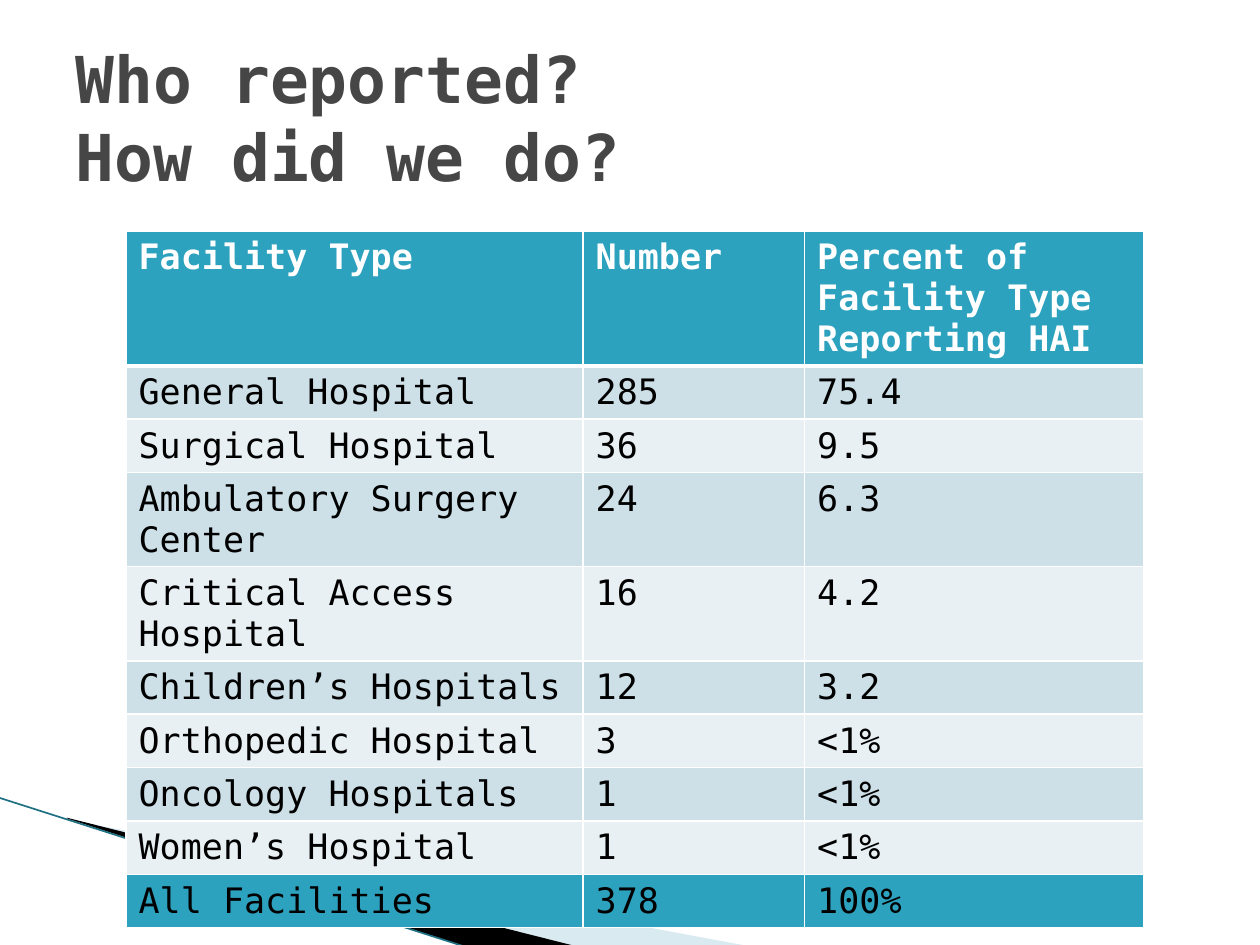
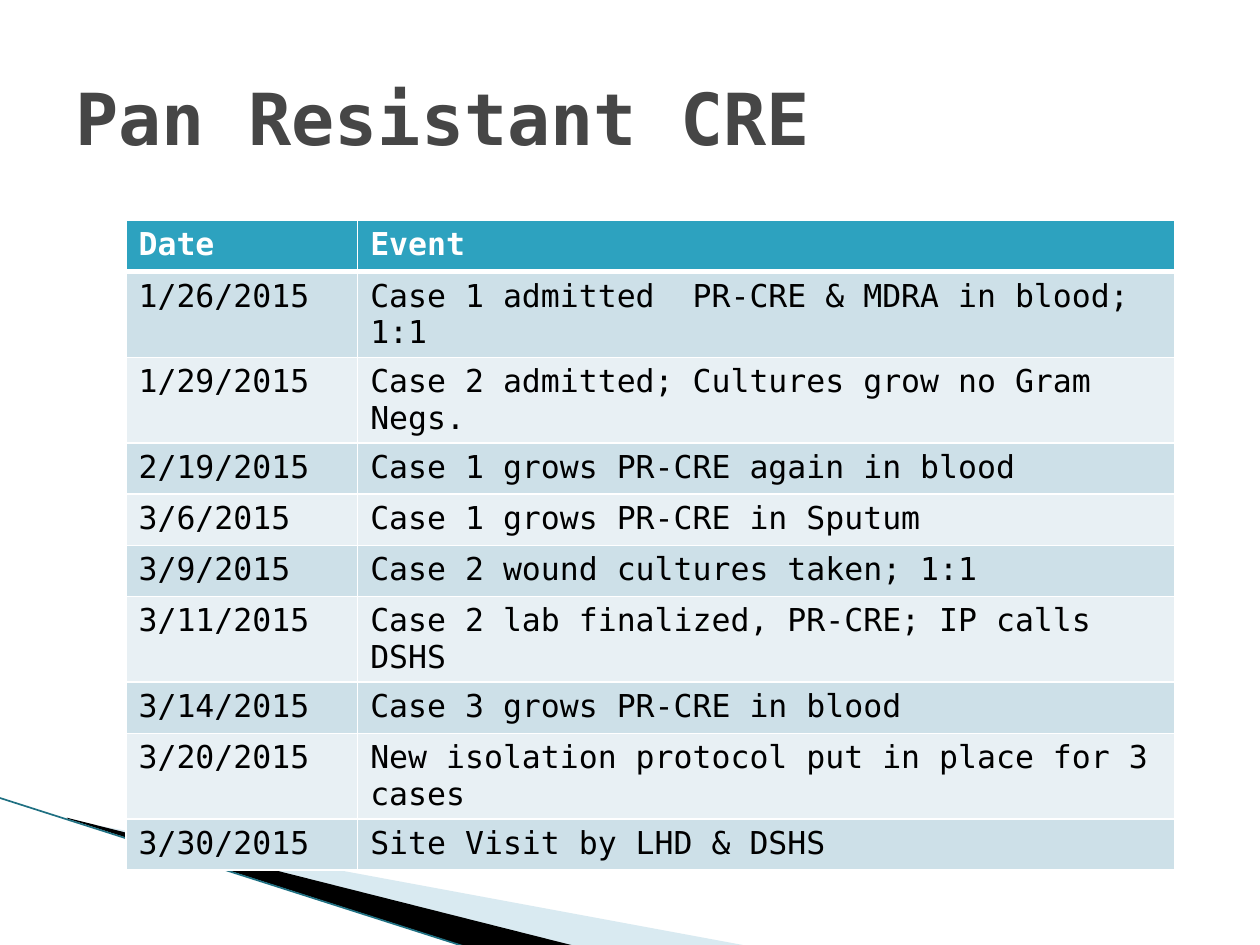
from lxml import etree
from pptx import Presentation
from pptx import util as u
from pptx.dml.color import RGBColor
from pptx.enum import shapes, text
from pptx.oxml import ns, parse_xml

Pt = u.Pt
FONT = "DejaVu Sans Mono"
HUES = {
    "head": "2DA2BF", "odd": "CDE0E8", "even": "E8F0F4", "white": "FFFFFF",
    "black": "000000", "title": "464646", "pale": "A0CBDC", "line": "1F7082",
}
ROW = 29.2
WEDGES = [
    ("pale", 40, [(39.6, 468.7), (428.4, 540.7), (328.3, 540.7), (39.6, 468)]),
    ("black", 100, [(38.2, 467.3), (329, 540.7), (267.8, 541.4), (38.9, 468)]),
]
TYPES = [
    ("Facility Type", "Number", "Percent of Facility Type Reporting HAI"),
    ("General Hospital", "285", "75.4"),
    ("Surgical Hospital", "36", "9.5"),
    ("Ambulatory Surgery Center", "24", "6.3"),
    ("Critical Access Hospital", "16", "4.2"),
    ("Children’s Hospitals", "12", "3.2"),
    ("Orthopedic Hospital", "3", "<1%"),
    ("Oncology Hospitals", "1", "<1%"),
    ("Women’s Hospital", "1", "<1%"),
    ("All Facilities", "378", "100%"),
]
EVENTS = [
    ("Date", "Event"),
    ("1/26/2015", "Case 1 admitted  PR-CRE & MDRA in blood; 1:1"),
    ("1/29/2015", "Case 2 admitted; Cultures grow no Gram Negs."),
    ("2/19/2015", "Case 1 grows PR-CRE again in blood"),
    ("3/6/2015", "Case 1 grows PR-CRE in Sputum"),
    ("3/9/2015", "Case 2 wound cultures taken; 1:1"),
    ("3/11/2015", "Case 2 lab finalized, PR-CRE; IP calls DSHS"),
    ("3/14/2015", "Case 3 grows PR-CRE in blood"),
    ("3/20/2015", "New isolation protocol put in place for 3 cases"),
    ("3/30/2015", "Site Visit by LHD & DSHS"),
]


def tint(name):
    return RGBColor.from_string(HUES[name])


def assign(item, form):
    for key, value in form.items():
        setattr(item, key, value)


def style(para, size, hue, bold):
    for run in para.runs:
        assign(run.font, {"name": FONT, "size": Pt(size), "bold": bold})
        run.font.color.rgb = tint(hue)


def paint(item, hue):
    item.fill.solid()
    item.fill.fore_color.rgb = tint(hue)


def add_wedge(slide, hue, alpha, points):
    spots = [(Pt(x), Pt(y)) for x, y in points]
    pen = slide.shapes.build_freeform(*spots[0])
    pen.add_line_segments(spots[1:])
    wedge = pen.convert_to_shape()
    wedge.shadow.inherit = False
    paint(wedge, hue)
    wedge.line.fill.background()
    if alpha < 100:
        color = wedge.fill._xPr.find(".//" + ns.qn("a:srgbClr"))
        etree.SubElement(color, ns.qn("a:alpha"), val=str(alpha * 1000))


def add_swoosh(slide):
    for wedge in WEDGES:
        add_wedge(slide, *wedge)
    edge = slide.shapes.add_connector(
        shapes.MSO_CONNECTOR.STRAIGHT, Pt(-0.7), Pt(455.8), Pt(267.1), Pt(541.4))
    edge.line.width = Pt(0.95)
    edge.line.color.rgb = tint("line")
    etree.SubElement(edge._element.spPr, ns.qn("a:effectLst"))


def set_title(slide, words, size):
    title = slide.shapes.title
    assign(title, {"left": Pt(36), "top": Pt(21.6),
                   "width": Pt(648), "height": Pt(90)})
    frame = title.text_frame
    frame.text = words
    assign(frame, {"vertical_anchor": text.MSO_ANCHOR.MIDDLE,
                   "auto_size": text.MSO_AUTO_SIZE.NONE, "word_wrap": True})
    para = frame.paragraphs[0]
    para.alignment = text.PP_ALIGN.LEFT
    style(para, size, "title", True)


def add_rules(cell, row):
    props = cell._tc.get_or_add_tcPr()
    widths = {"L": 1, "R": 1, "T": 3 if row == 1 else 1, "B": 3 if row == 0 else 1}
    for spot, (side, width) in enumerate(widths.items()):
        props.insert(spot, parse_xml(
            f'<a:ln{side} {ns.nsdecls("a")} w="{Pt(width)}"><a:solidFill>'
            f'<a:srgbClr val="{HUES["white"]}"/></a:solidFill></a:ln{side}>'))


def add_grid(slide, rows, top, widths, size, total=False):
    frame = slide.shapes.add_table(
        len(rows), len(widths), Pt(72), Pt(top), Pt(sum(widths)), Pt(ROW * len(rows)))
    grid = frame.table
    for col, width in zip(grid.columns, widths):
        col.width = Pt(width)
    for r, words in enumerate(rows):
        grid.rows[r].height = Pt(ROW)
        first = r == 0
        last = total and r == len(rows) - 1
        hue = "head" if first or last else "odd" if r % 2 else "even"
        for c, word in enumerate(words):
            cell = grid.cell(r, c)
            cell.text = word
            style(cell.text_frame.paragraphs[0], size,
                  "white" if first else "black", first)
            paint(cell, hue)
            add_rules(cell, r)


def add_page(deck, words, size):
    slide = deck.slides.add_slide(deck.slide_layouts[5])
    add_swoosh(slide)
    set_title(slide, words, size)
    return slide


def main():
    deck = Presentation()
    assign(deck, {"slide_width": Pt(720), "slide_height": Pt(540)})
    who = add_page(deck, "Who reported? \vHow did we do?", 36.9)
    add_grid(who, TYPES, 132, [261.2, 126.6, 193.8], 20, total=True)
    cre = add_page(deck, "Pan Resistant CRE", 41)
    add_grid(cre, EVENTS, 126, [132.4, 467.2], 18)
    deck.save("out.pptx")


if __name__ == "__main__":
    main()
